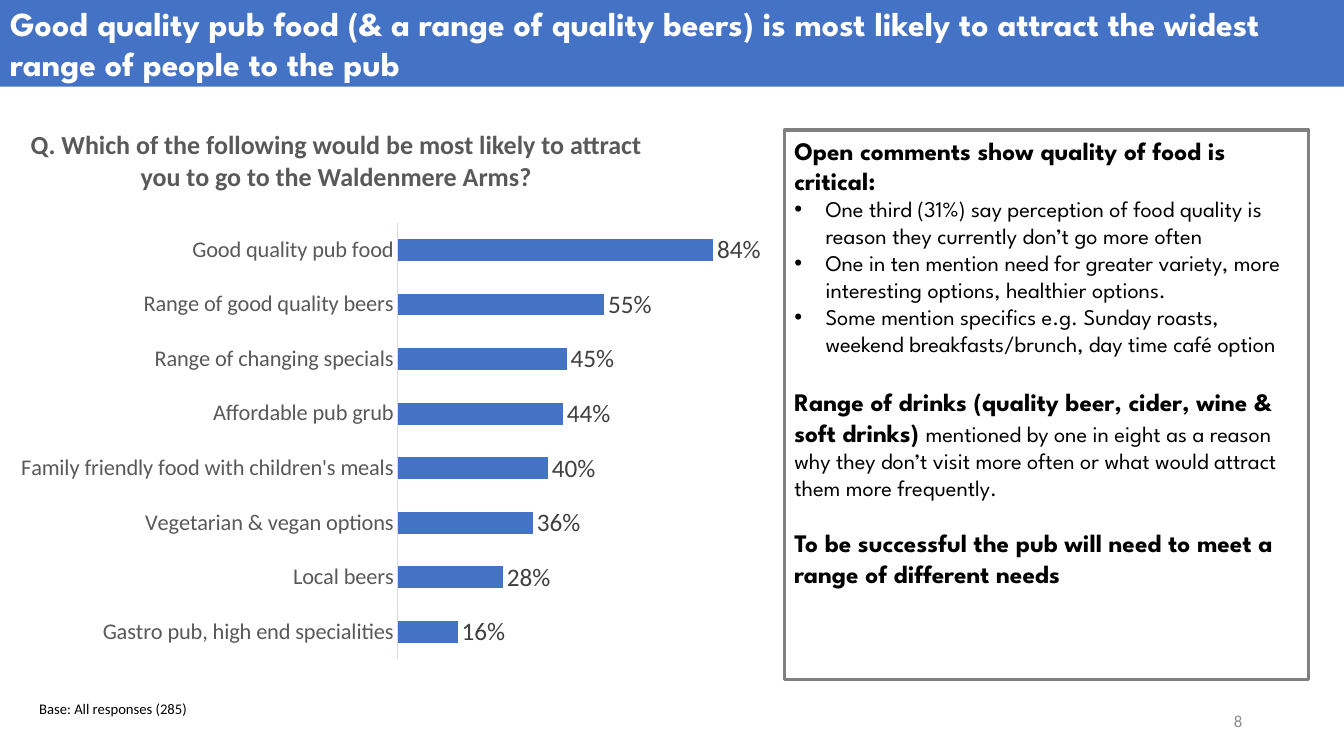
"""Build the slide on what would attract people to the pub."""
from dataclasses import dataclass

from pptx import Presentation, util as u
from pptx.chart import data as chart_data
from pptx.dml.color import RGBColor
from pptx.enum import chart as charts, shapes, text
from pptx.oxml.ns import qn


@dataclass(frozen=True)
class Theme:
    """Hold the fonts, colours and type sizes."""
    heading_font: str = "League Spartan"
    body_font: str = "Calibri"
    blue: str = "4472C4"
    white: str = "FFFFFF"
    black: str = "000000"
    label: str = "404040"
    muted: str = "595959"
    number: str = "8C8C8C"
    axis: str = "D9D9D9"
    border: str = "808080"
    title: float = 24
    question: float = 18.6
    large: float = 18
    medium: float = 16
    page: float = 12
    note: float = 10.5


THEME = Theme()
ATTRACTIONS = {
    "Gastro pub, high end specialities": 0.16,
    "Local beers": 0.28,
    "Vegetarian & vegan options": 0.36,
    "Family friendly food with children's meals": 0.40,
    "Affordable pub grub": 0.44,
    "Range of changing specials": 0.45,
    "Range of good quality beers": 0.55,
    "Good quality pub food": 0.84,
}
COMMENTS = [
    {"strong": "Open comments show quality of food is critical:"},
    {"plain": "One third (31%) say perception of food quality is reason they "
              "currently don’t go more often", "bullet": True},
    {"plain": "One in ten mention need for greater variety, more interesting "
              "options, healthier options.", "bullet": True},
    {"plain": "Some mention specifics e.g. Sunday roasts, weekend "
              "breakfasts/brunch, day time café option", "bullet": True},
    {"strong": "Range of drinks (quality beer, cider, wine & soft drinks) ",
     "plain": "mentioned by one in eight as a reason why they don’t visit more "
              "often or what would attract them more frequently.", "gap": 21.5},
    {"strong": "To be successful the pub will need to meet a range of "
               "different needs", "gap": 19},
]


def apply(target, values):
    """Set each attribute of the target from a dict."""
    for name, value in values.items():
        setattr(target, name, value)


def set_font(font, size, color, name=THEME.body_font, bold=False):
    """Format a font."""
    apply(font, {"name": name, "size": u.Pt(size), "bold": bold})
    font.color.rgb = RGBColor.from_string(color)


def place(shape, box):
    """Position a shape by left, top, width and height in inches."""
    names = ("left", "top", "width", "height")
    apply(shape, {name: u.Inches(value) for name, value in zip(names, box)})


def add_run(paragraph, words, *font_values, **font_options):
    """Add formatted words to a paragraph."""
    run = paragraph.add_run()
    run.text = words
    set_font(run.font, *font_values, **font_options)


def add_bullet(paragraph):
    """Give a paragraph a hanging bullet."""
    properties = paragraph._p.get_or_add_pPr()
    indent = u.Inches(0.31)
    properties.set("marL", str(indent))
    properties.set("indent", str(-indent))
    font = properties.makeelement(qn("a:buFont"), {"typeface": "Arial"})
    character = properties.makeelement(qn("a:buChar"), {"char": "•"})
    properties.extend([font, character])


def add_banner(slide, words):
    """Turn the title placeholder into a full-width banner."""
    title = slide.shapes.title
    place(title, (0, 0, 13.33, 0.86))
    title.fill.solid()
    title.fill.fore_color.rgb = RGBColor.from_string(THEME.blue)
    apply(title.text_frame, {
        "word_wrap": True, "auto_size": text.MSO_AUTO_SIZE.NONE,
        "vertical_anchor": text.MSO_ANCHOR.MIDDLE})
    paragraph = title.text_frame.paragraphs[0]
    paragraph.alignment = text.PP_ALIGN.LEFT
    add_run(paragraph, words, THEME.title, THEME.white,
            name=THEME.heading_font, bold=True)


def add_label(slide, box, words, size, color, bold=False,
              align=text.PP_ALIGN.LEFT, anchor=text.MSO_ANCHOR.TOP):
    """Add a one-paragraph text box."""
    label = slide.shapes.add_textbox(0, 0, 0, 0)
    place(label, box)
    apply(label.text_frame, {"word_wrap": True, "vertical_anchor": anchor})
    paragraph = label.text_frame.paragraphs[0]
    paragraph.alignment = align
    add_run(paragraph, words, size, color, bold=bold)


def set_plot_area(chart, box):
    """Fix the inner plot area as fractions of the chart."""
    plot_area = chart._chartSpace.chart.plotArea
    layout = plot_area.find(qn("c:layout"))
    if layout is None:
        layout = plot_area.makeelement(qn("c:layout"), {})
        plot_area.insert(0, layout)
    manual = layout.makeelement(qn("c:manualLayout"), {})
    layout.append(manual)
    settings = {"layoutTarget": "inner", "xMode": "edge", "yMode": "edge"}
    settings.update(zip("xywh", map(str, box)))
    for name, value in settings.items():
        manual.append(manual.makeelement(qn(f"c:{name}"), {"val": value}))


def add_bar_chart(slide, box, plot_box, values):
    """Add the horizontal bar chart."""
    data = chart_data.CategoryChartData(number_format="0%")
    data.categories = list(values)
    data.add_series("Series 1", list(values.values()))
    chart = slide.shapes.add_chart(
        charts.XL_CHART_TYPE.BAR_CLUSTERED, *map(u.Inches, box), data).chart
    apply(chart, {"has_legend": False, "has_title": False})
    set_font(chart.font, THEME.large, THEME.black)
    set_plot_area(chart, plot_box)
    apply(chart.value_axis, {
        "visible": False, "has_major_gridlines": False,
        "minimum_scale": 0, "maximum_scale": 0.9})
    axis = chart.category_axis
    apply(axis, {"major_tick_mark": charts.XL_TICK_MARK.NONE,
                 "minor_tick_mark": charts.XL_TICK_MARK.NONE})
    set_font(axis.tick_labels.font, THEME.medium, THEME.muted)
    axis.format.line.width = u.Pt(0.75)
    axis.format.line.color.rgb = RGBColor.from_string(THEME.axis)
    plot = chart.plots[0]
    apply(plot, {"gap_width": 150, "overlap": -25,
                 "vary_by_categories": False, "has_data_labels": True})
    fill = plot.series[0].format.fill
    fill.solid()
    fill.fore_color.rgb = RGBColor.from_string(THEME.blue)
    apply(plot.data_labels, {
        "show_value": True, "number_format": "0%",
        "number_format_is_linked": False,
        "position": charts.XL_LABEL_POSITION.OUTSIDE_END})
    set_font(plot.data_labels.font, THEME.large, THEME.label)


def add_comments(slide, box, comments):
    """Add the outlined panel of comments."""
    panel = slide.shapes.add_shape(
        shapes.MSO_SHAPE.RECTANGLE, *map(u.Inches, box))
    panel.shadow.inherit = False
    panel.fill.background()
    panel.line.width = u.Pt(2.25)
    panel.line.color.rgb = RGBColor.from_string(THEME.border)
    frame = panel.text_frame
    apply(frame, {"word_wrap": True, "vertical_anchor": text.MSO_ANCHOR.TOP})
    styles = {"strong": (THEME.large, True), "plain": (THEME.medium, False)}
    for index, comment in enumerate(comments):
        paragraph = frame.add_paragraph() if index else frame.paragraphs[0]
        apply(paragraph, {"alignment": text.PP_ALIGN.LEFT,
                          "space_before": u.Pt(comment.get("gap", 0))})
        if comment.get("bullet"):
            add_bullet(paragraph)
        for style, (size, bold) in styles.items():
            if style in comment:
                add_run(paragraph, comment[style], size, THEME.black,
                        name=THEME.heading_font, bold=bold)


def main():
    """Build and save the slide."""
    presentation = Presentation()
    apply(presentation, {"slide_width": u.Inches(13.33),
                         "slide_height": u.Inches(7.5)})
    slide = presentation.slides.add_slide(presentation.slide_layouts[5])
    add_banner(slide, "Good quality pub food (& a range of quality beers) is "
                      "most likely to attract the widest range of people to the pub")
    add_label(slide, (0.12, 1.23, 6.43, 0.84),
              "Q. Which of the following would be most likely to attract you "
              "to go to the Waldenmere Arms?", THEME.question, THEME.muted,
              bold=True, align=text.PP_ALIGN.CENTER)
    add_bar_chart(slide, (0.12, 2.01, 7.5, 4.73),
                  (0.51, 0.042, 0.447, 0.916), ATTRACTIONS)
    add_label(slide, (0.29, 6.89, 2.18, 0.24), "Base: All responses (285)",
              THEME.note, THEME.black)
    add_comments(slide, (7.78, 1.29, 5.2, 5.45), COMMENTS)
    add_label(slide, (9.42, 6.95, 3, 0.4), "8", THEME.page, THEME.number,
              align=text.PP_ALIGN.RIGHT, anchor=text.MSO_ANCHOR.MIDDLE)
    presentation.save("out.pptx")


if __name__ == "__main__":
    main()
